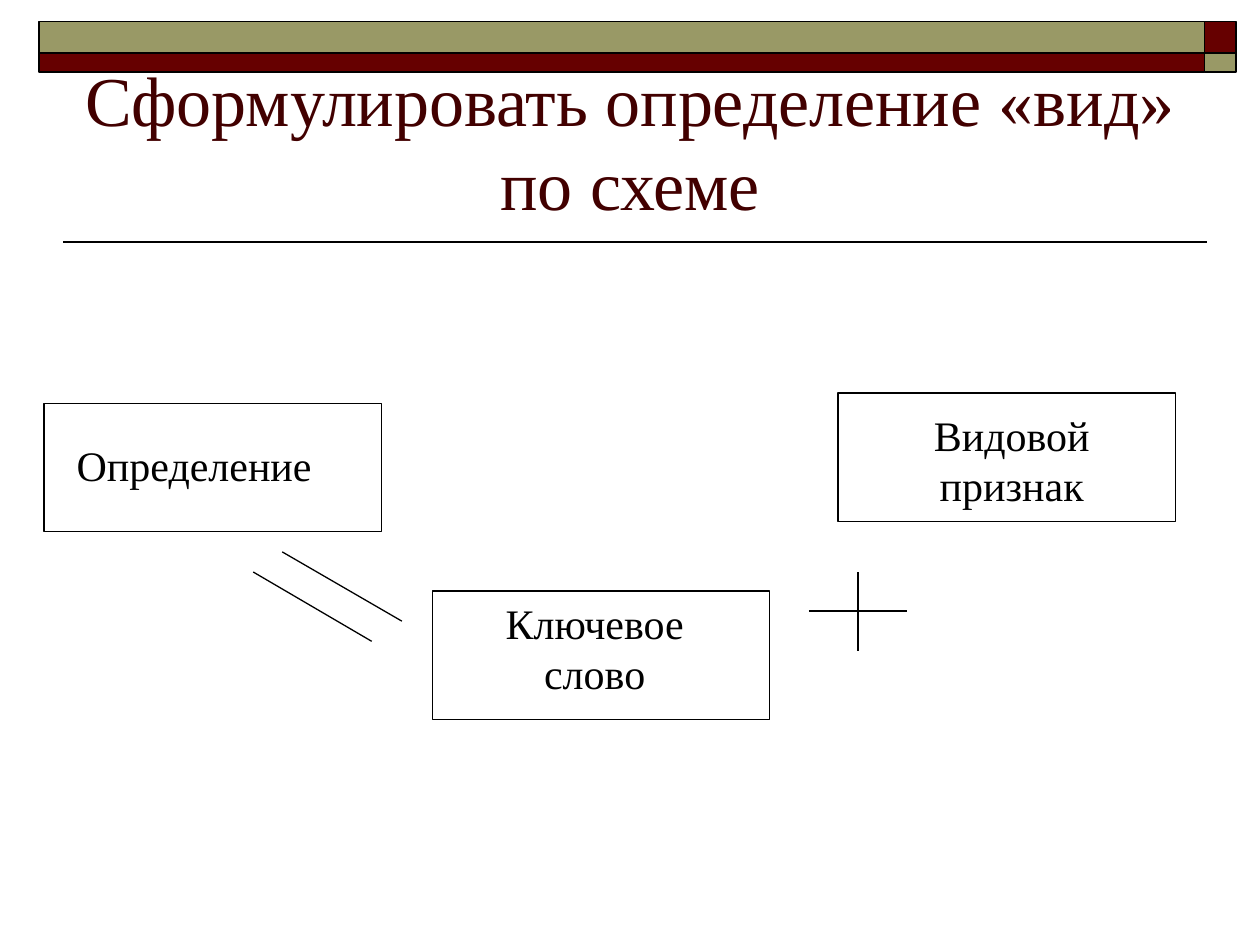
from lxml.etree import SubElement
from pptx import Presentation
from pptx.dml.color import RGBColor
from pptx.enum.shapes import MSO_CONNECTOR, MSO_SHAPE
from pptx.enum.text import MSO_ANCHOR, MSO_AUTO_SIZE, PP_ALIGN
from pptx.oxml.ns import qn
from pptx.util import Inches, Pt

COLORS = {"maroon": "660000", "olive": "999966", "title": "420000", "black": "000000"}
FONT = "Times New Roman"

deck = Presentation()
deck.slide_width, deck.slide_height = Inches(10), Inches(7.5)
page = deck.slides.add_slide(deck.slide_layouts[5])


def add_rectangle(left, top, width, height, line_width, fill=None):
    box = page.shapes.add_shape(
        MSO_SHAPE.RECTANGLE, Inches(left), Inches(top), Inches(width), Inches(height)
    )
    box.shadow.inherit = False
    if fill:
        box.fill.solid()
        box.fill.fore_color.rgb = RGBColor.from_string(COLORS[fill])
    else:
        box.fill.background()
    box.line.color.rgb = RGBColor.from_string(COLORS["black"])
    box.line.width = Pt(line_width)


def write_text(frame, text, size, color, align):
    frame.word_wrap = True
    para = frame.paragraphs[0]
    para.alignment = align
    span = para.add_run()
    span.text = text
    span.font.name = FONT
    span.font.size = Pt(size)
    span.font.color.rgb = RGBColor.from_string(COLORS[color])


banner = [
    (9.56, 0.17, 0.25, 0.25, "maroon"),
    (0.31, 0.17, 9.25, 0.25, "olive"),
    (0.31, 0.42, 9.25, 0.15, "maroon"),
    (9.56, 0.42, 0.25, 0.15, "olive"),
]
for left, top, width, height, fill in banner:
    add_rectangle(left, top, width, height, 1, fill)

title = page.shapes.title
title.left, title.top = Inches(0.5), Inches(0.58)
title.width, title.height = Inches(9), Inches(1.25)
title.text_frame.auto_size = MSO_AUTO_SIZE.NONE
title.text_frame.vertical_anchor = MSO_ANCHOR.BOTTOM
write_text(
    title.text_frame, "Сформулировать определение «вид» по схеме", 40, "title", PP_ALIGN.CENTER
)

for left, top in [(0.35, 3.2), (3.43, 4.69), (6.65, 3.12)]:
    add_rectangle(left, top, 2.68, 1.02, 0.75)

title_rule = (0.5, 1.92, 9.58, 1.92, 1)
equals_sign = [(2.01, 4.54, 2.95, 5.09, 0.75), (2.24, 4.38, 3.19, 4.93, 0.75)]
plus_sign = [(6.42, 4.85, 7.2, 4.85, 0.75), (6.81, 4.54, 6.81, 5.17, 0.75)]
for x1, y1, x2, y2, line_width in [title_rule, *equals_sign, *plus_sign]:
    stroke = page.shapes.add_connector(
        MSO_CONNECTOR.STRAIGHT, Inches(x1), Inches(y1), Inches(x2), Inches(y2)
    )
    stroke.line.color.rgb = RGBColor.from_string(COLORS["black"])
    stroke.line.width = Pt(line_width)
    SubElement(stroke._element.spPr, qn("a:effectLst"))

labels = [
    (0.51, 3.44, 2.36, 0.5, "Определение", PP_ALIGN.LEFT),
    (3.58, 4.69, 2.28, 0.9, "Ключевое слово", PP_ALIGN.CENTER),
    (6.81, 3.2, 2.44, 0.9, "Видовой признак", PP_ALIGN.CENTER),
]
for left, top, width, height, text, align in labels:
    label = page.shapes.add_textbox(Inches(left), Inches(top), Inches(width), Inches(height))
    label.text_frame.auto_size = MSO_AUTO_SIZE.SHAPE_TO_FIT_TEXT
    write_text(label.text_frame, text, 24, "black", align)

deck.save("out.pptx")
